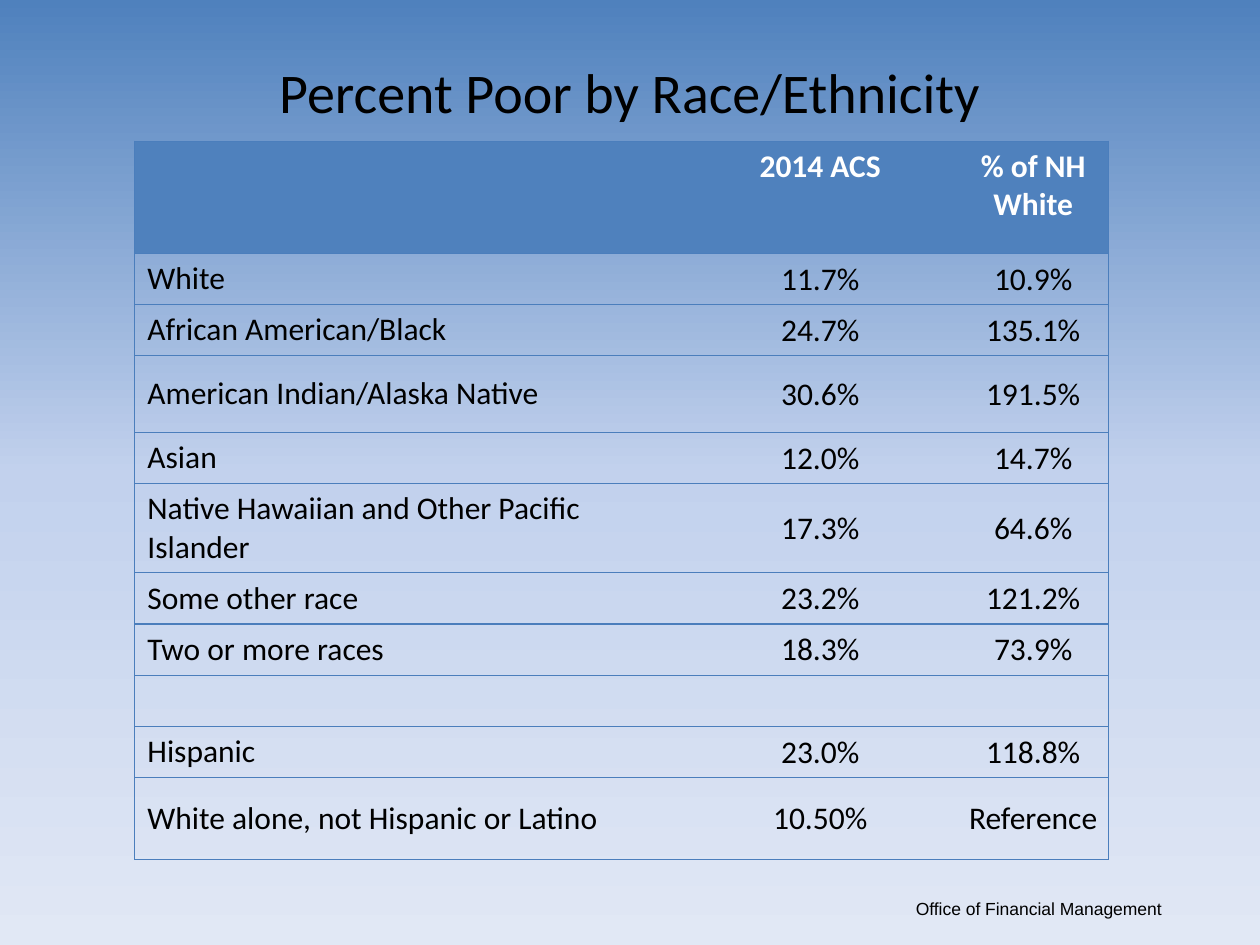
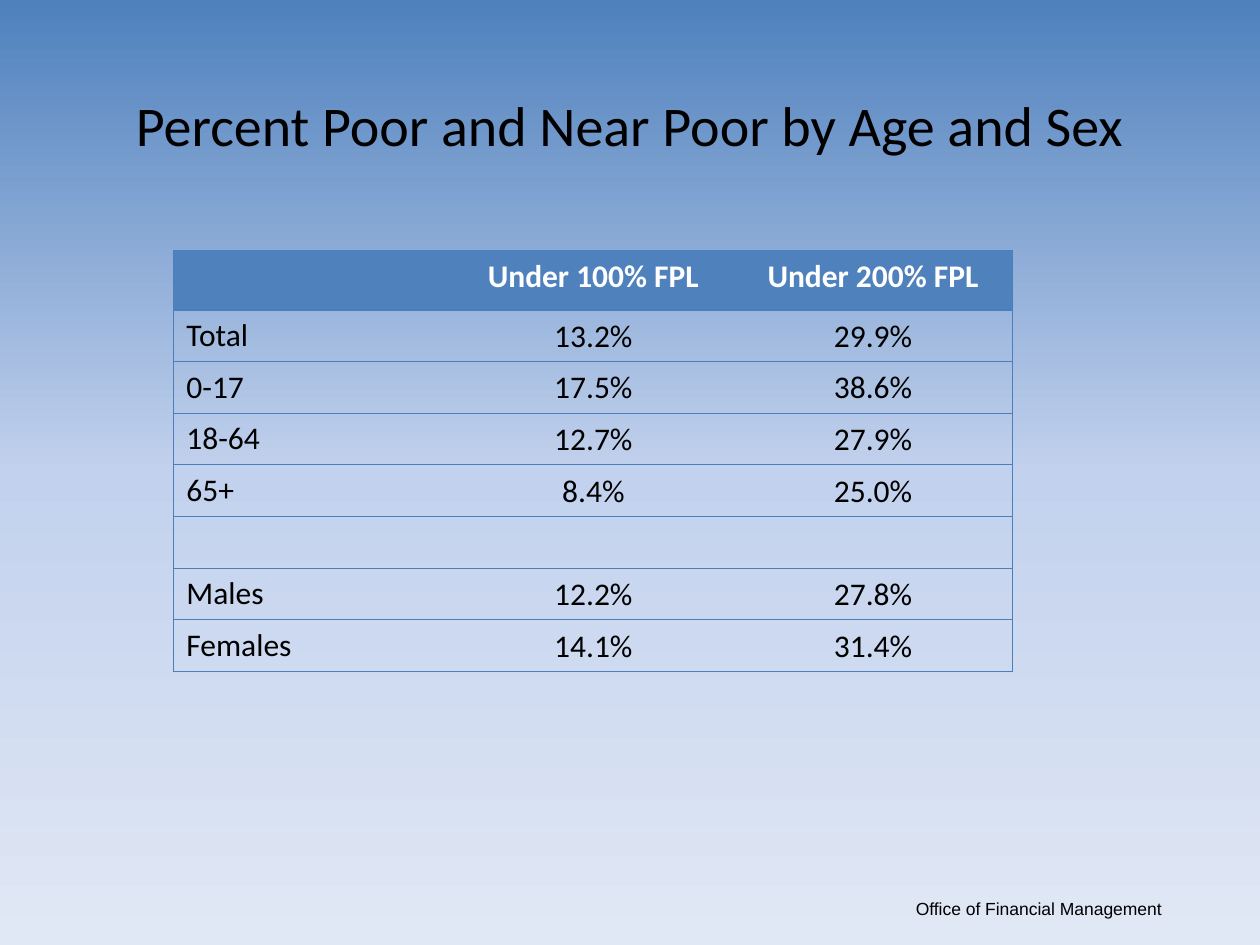
from lxml import etree
from pptx import Presentation, util as u
from pptx.dml.color import RGBColor
from pptx.enum import text
from pptx.oxml import ns

# Shared look: the slide is a grid of 100 columns by 75 rows
UNIT = u.Inches(0.1)
COLUMNS, ROWS = 100, 75
COLORS = {"sky": "4F81BD", "mist": "C2D1ED", "haze": "E1E8F5",
          "rule": "4B7EBC", "ink": "000000", "paper": "FFFFFF"}
BACKDROP = {0: "sky", 50: "mist", 100: "haze"}
NO_GRID_STYLE = "{2D5ABB26-0587-4C30-8999-92F81FD0307C}"

TITLE = {"name": "Calibri", "size": u.Pt(32), "color": "ink"}
FOOTER = {"name": "Arial", "size": u.Pt(10), "color": "ink"}
HEADER = {"name": "Calibri", "size": u.Pt(18), "bold": True, "color": "paper"}
BODY = {"name": "Calibri", "size": u.Pt(18), "bold": False, "color": "ink"}
VALUE_MARGINS = {"margin_left": 0.01, "margin_right": 0.01,
                 "margin_top": 0.01, "margin_bottom": 0}

RACE_ROWS = [
    ("", "2014 ACS", "% of NH White"),
    ("White", "11.7%", "10.9%"),
    ("African American/Black", "24.7%", "135.1%"),
    ("American Indian/Alaska Native", "30.6%", "191.5%"),
    ("Asian", "12.0%", "14.7%"),
    ("Native Hawaiian and Other Pacific Islander", "17.3%", "64.6%"),
    ("Some other race", "23.2%", "121.2%"),
    ("Two or more races", "18.3%", "73.9%"),
    ("", "", ""),
    ("Hispanic", "23.0%", "118.8%"),
    ("White alone, not Hispanic or Latino", "10.50%", "Reference"),
]
AGE_SEX_ROWS = [
    ("", "Under 100% FPL", "Under 200% FPL"),
    ("Total", "13.2%", "29.9%"),
    ("0-17", "17.5%", "38.6%"),
    ("18-64", "12.7%", "27.9%"),
    ("65+", "8.4%", "25.0%"),
    ("", "", ""),
    ("Males", "12.2%", "27.8%"),
    ("Females", "14.1%", "31.4%"),
]


def grid(*lengths):
    return [round(length * UNIT) for length in lengths]


def write(frame, words, style, align=text.PP_ALIGN.LEFT):
    para = frame.paragraphs[0]
    para.alignment = align
    span = para.add_run()
    span.text = words
    for name, value in style.items():
        if name == "color":
            span.font.color.rgb = RGBColor.from_string(COLORS[value])
        else:
            setattr(span.font, name, value)


# Master: gradient and footer
def paint_backdrop(master):
    fill = master.background.fill
    fill.gradient()
    fill.gradient_angle = 270
    stops = master.element.find(".//" + ns.qn("a:gsLst"))
    for stop in list(stops):
        stops.remove(stop)
    for percent, color in BACKDROP.items():
        stop = etree.SubElement(stops, ns.qn("a:gs"), pos=str(percent * 1000))
        etree.SubElement(stop, ns.qn("a:srgbClr"), val=COLORS[color])


def add_master_footer(master, page, words):
    box = page.shapes.add_textbox(*grid(71.7, 70.8, 21.7, 2.7))
    box.text_frame.word_wrap = False
    box.text_frame.auto_size = text.MSO_AUTO_SIZE.SHAPE_TO_FIT_TEXT
    write(box.text_frame, words, FOOTER)
    master.element.cSld.spTree.append(box.element)


# Slides: title and table
def add_page(deck, title, top, height):
    page = deck.slides.add_slide(deck.slide_layouts.get_by_name("Title Only"))
    box = page.shapes.title
    box.left, box.top, box.width, box.height = grid(7.5, top, 85, height)
    box.text_frame.vertical_anchor = text.MSO_ANCHOR.TOP
    write(box.text_frame, title, TITLE, text.PP_ALIGN.CENTER)
    return page


def add_borders(cell, sides):
    properties = cell._tc.get_or_add_tcPr()
    for side in sides:
        line = etree.SubElement(properties, ns.qn("a:ln" + side), w=str(u.Pt(0.75)))
        fill = etree.SubElement(line, ns.qn("a:solidFill"))
        etree.SubElement(fill, ns.qn("a:srgbClr"), val=COLORS["rule"])


def format_cell(cell, words, is_header, is_label, is_last):
    add_borders(cell, ("L" if is_label else "") + ("R" if is_last else "") + "TB")
    if is_header:
        cell.fill.solid()
        cell.fill.fore_color.rgb = RGBColor.from_string(COLORS["sky"])
    else:
        cell.fill.background()
        cell.vertical_anchor = text.MSO_ANCHOR.MIDDLE
    if words and not is_header and not is_label:
        for name, value in VALUE_MARGINS.items():
            setattr(cell, name, u.Inches(value))
    if words:
        align = text.PP_ALIGN.LEFT if is_label else text.PP_ALIGN.CENTER
        write(cell.text_frame, words, HEADER if is_header else BODY, align)


def add_poverty_table(page, left, top, widths, heights, rows):
    frame = page.shapes.add_table(len(rows), len(widths),
                                  *grid(left, top, sum(widths), sum(heights)))
    table = frame.table
    table.horz_banding = False
    table._tbl.tblPr.find(ns.qn("a:tableStyleId")).text = NO_GRID_STYLE
    for column, width in zip(table.columns, grid(*widths)):
        column.width = width
    for row, height in zip(table.rows, grid(*heights)):
        row.height = height
    for r, row in enumerate(rows):
        for c, words in enumerate(row):
            format_cell(table.cell(r, c), words, r == 0, c == 0, c == len(row) - 1)


def main():
    deck = Presentation()
    deck.slide_width, deck.slide_height = grid(COLUMNS, ROWS)
    paint_backdrop(deck.slide_master)

    # Poverty by race and ethnicity: some rows are taller than the rest
    page = add_page(deck, "Percent Poor by Race/Ethnicity", 4.1, 15)
    add_master_footer(deck.slide_master, page, "Office of Financial Management")
    taller = {0: 8.9, 3: 6.1, 5: 6.8, 10: 6.5}
    heights = [taller.get(r, 3.9) for r in range(len(RACE_ROWS))]
    add_poverty_table(page, 10.7, 11.2, [43.5, 21.8, 12], heights, RACE_ROWS)

    # Poverty by age and sex
    page = add_page(deck, "Percent Poor and Near Poor by Age and Sex", 6.7, 12.5)
    heights = [4.7] + [4.1] * (len(AGE_SEX_ROWS) - 1)
    add_poverty_table(page, 13.8, 19.9, [22.2] * 3, heights, AGE_SEX_ROWS)

    deck.save("out.pptx")


if __name__ == "__main__":
    main()
